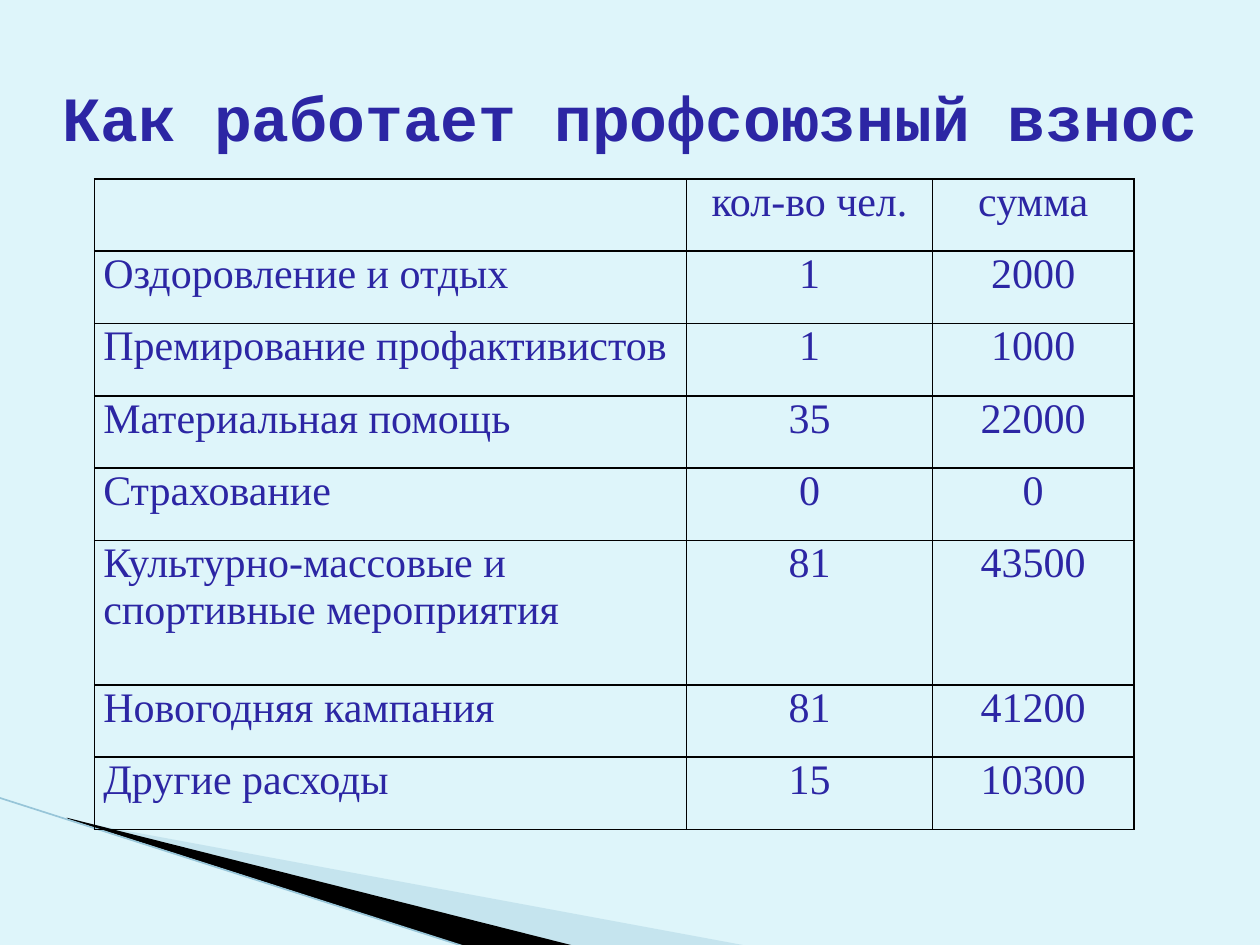
"""Build a slide with a table of how the trade union fee is spent."""
from lxml.etree import SubElement
from pptx import Presentation
from pptx.dml.color import RGBColor
from pptx.enum.shapes import MSO_CONNECTOR
from pptx.enum.text import MSO_ANCHOR, PP_ALIGN
from pptx.oxml.ns import qn
from pptx.util import Inches, Pt

PAPER = RGBColor(0xDE, 0xF5, 0xFA)
INK = RGBColor(0x2C, 0x26, 0xA4)
BLACK = RGBColor(0, 0, 0)
MIST = RGBColor(0xA0, 0xCB, 0xDC)
EDGE = RGBColor(0x97, 0xC5, 0xD8)

TITLE = "Как работает профсоюзный взнос"
ROWS = [
    ("", "кол-во чел.", "сумма"),
    ("Оздоровление и отдых", "1", "2000"),
    ("Премирование профактивистов", "1", "1000"),
    ("Материальная помощь", "35", "22000"),
    ("Страхование", "0", "0"),
    ("Культурно-массовые и\nспортивные мероприятия", "81", "43500"),
    ("Новогодняя кампания", "81", "41200"),
    ("Другие расходы", "15", "10300"),
]
WIDTHS = (4.7, 1.95, 1.6)
ROW_H = 0.574
WEDGES = [
    (MIST, 40, [(0.55, 6.51), (5.95, 7.51), (4.56, 7.51), (0.55, 6.5)]),
    (BLACK, 100, [(0.53, 6.49), (4.57, 7.51), (3.72, 7.52), (0.54, 6.5)]),
]


def write(frame, text, font="Times New Roman", size=24, bold=False, align=PP_ALIGN.CENTER):
    frame.word_wrap = True
    frame.text = text
    for para in frame.paragraphs:
        para.alignment = align
        for run in para.runs:
            run.font.name, run.font.size, run.font.bold = font, Pt(size), bold
            run.font.color.rgb = INK


def add_wedge(slide, color, alpha, points):
    pen = slide.shapes.build_freeform(*map(Inches, points[0]))
    pen.add_line_segments([tuple(map(Inches, point)) for point in points[1:]])
    wedge = pen.convert_to_shape()
    wedge.shadow.inherit = False
    wedge.line.fill.background()
    wedge.fill.solid()
    wedge.fill.fore_color.rgb = color
    if alpha < 100:
        tint = wedge.fill._xPr.find(".//" + qn("a:srgbClr"))
        SubElement(tint, qn("a:alpha"), val=str(alpha * 1000))


def add_edge(slide):
    ends = map(Inches, (-0.01, 6.33, 3.71, 7.52))
    edge = slide.shapes.add_connector(MSO_CONNECTOR.STRAIGHT, *ends)
    edge.line.color.rgb = EDGE
    edge.line.width = Pt(0.95)
    SubElement(edge._element.spPr, qn("a:effectLst"))


def add_title(slide):
    box = slide.shapes.add_textbox(Inches(0), Inches(0.3), Inches(10), Inches(1.25))
    box.text_frame.vertical_anchor = MSO_ANCHOR.MIDDLE
    write(box.text_frame, TITLE, font="Courier New", size=36, bold=True)


def style_cell(cell):
    props = cell._tc.get_or_add_tcPr()
    for side in ("lnL", "lnR", "lnT", "lnB"):
        line = SubElement(props, qn("a:" + side), w=str(Pt(1)))
        fill = SubElement(line, qn("a:solidFill"))
        SubElement(fill, qn("a:srgbClr"), val=str(BLACK))
    cell.fill.background()
    cell.margin_left = cell.margin_right = Inches(0.07)
    cell.margin_top = cell.margin_bottom = 0


def add_costs(slide):
    heights = [ROW_H * (1 + row[0].count("\n")) for row in ROWS]
    place = map(Inches, (0.75, 1.42, sum(WIDTHS), sum(heights)))
    table = slide.shapes.add_table(len(ROWS), len(WIDTHS), *place).table
    table.first_row = table.horz_banding = False
    for col, width in zip(table.columns, WIDTHS):
        col.width = Inches(width)
    for r, row in enumerate(ROWS):
        table.rows[r].height = Inches(heights[r])
        for c, text in enumerate(row):
            cell = table.cell(r, c)
            style_cell(cell)
            side = PP_ALIGN.LEFT if "\n" in text else PP_ALIGN.JUSTIFY
            write(cell.text_frame, text, align=PP_ALIGN.CENTER if c else side)


def main():
    deck = Presentation()
    deck.slide_width, deck.slide_height = Inches(10), Inches(7.5)
    slide = deck.slides.add_slide(deck.slide_layouts[6])
    slide.background.fill.solid()
    slide.background.fill.fore_color.rgb = PAPER
    for wedge in WEDGES:
        add_wedge(slide, *wedge)
    add_edge(slide)
    add_title(slide)
    add_costs(slide)
    deck.save("out.pptx")


if __name__ == "__main__":
    main()
